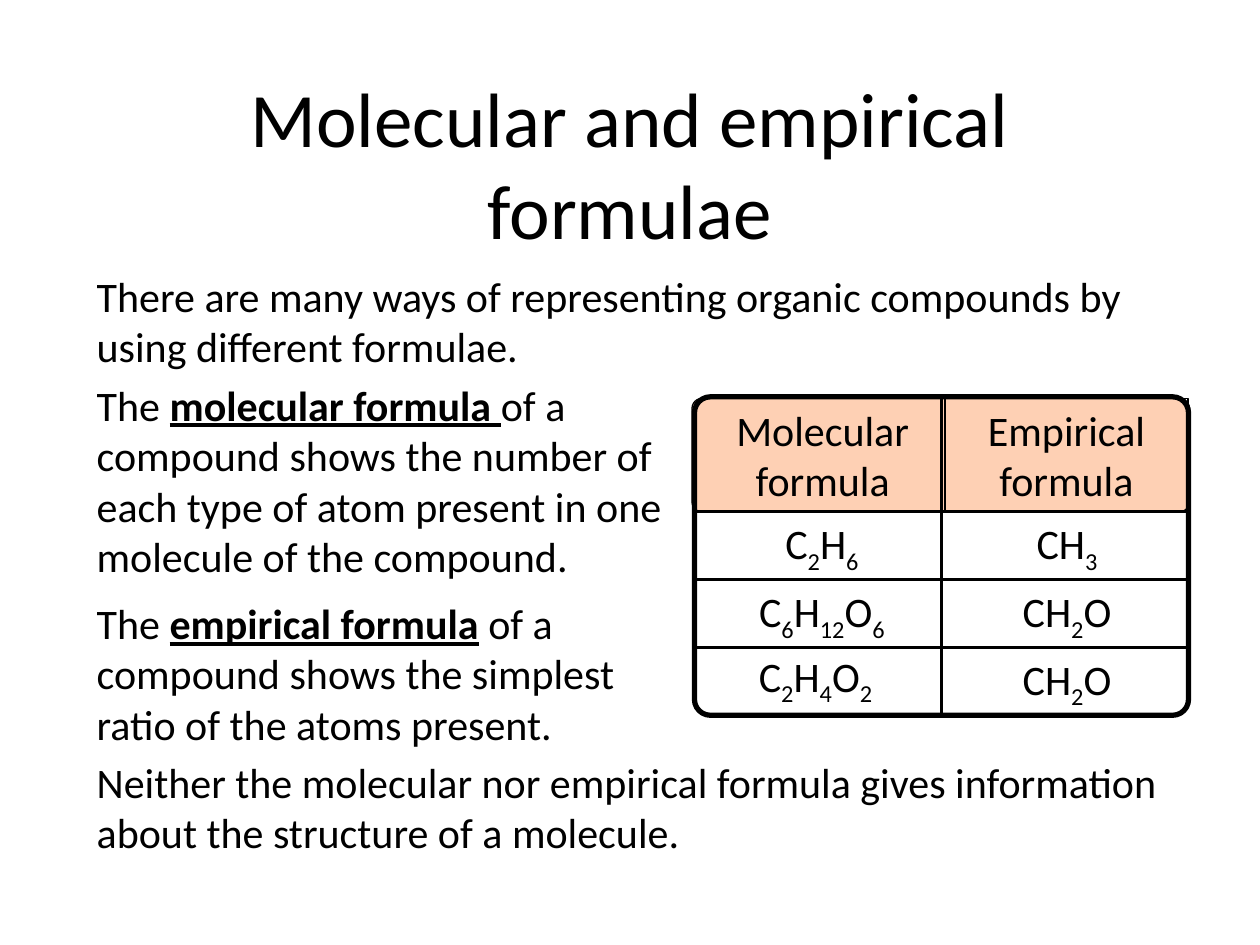
from itertools import groupby
from lxml.etree import SubElement
from pptx import Presentation
from pptx.dml.color import RGBColor
from pptx.enum.shapes import MSO_CONNECTOR, MSO_SHAPE
from pptx.enum.text import MSO_ANCHOR, PP_ALIGN
from pptx.oxml.ns import qn
from pptx.util import Cm, Pt

TITLE = "Molecular and empirical formulae"
BODY = [
    (5.33, 22.83, 2.31, [("There are many ways of representing organic compounds "
                          "by using different formulae.", False)]),
    (7.52, 12.4, 4.37, [("The ", False), ("molecular formula ", True),
                        ("of a compound shows the number of each type of atom "
                         "present in one molecule of the compound.", False)]),
    (11.92, 12.34, 3.33, [("The ", False), ("empirical formula", True),
                          (" of a compound shows the simplest ratio of the "
                           "atoms present.", False)]),
    (15.12, 23.4, 2.31, [("Neither the molecular nor empirical formula gives "
                          "information about the structure of a molecule.", False)]),
]
HEADS = ["Molecular formula", "Empirical formula"]
CELLS = [
    ("C2H6", 14.73, 10.31, 3.68), ("CH3", 20, 10.31, 3.02),
    ("C6H12O6", 14.73, 11.68, 3.68), ("CH2O", 20, 11.68, 3.02),
    ("C2H4O2", 14.6, 12.98, 3.68), ("CH2O", 20, 13.04, 3.02),
]
LEFT, TOP, WIDE, HIGH = 14, 8, 9.96, 6.42
HEAD, ROW = 2.29, 1.37
INK, PEACH = "000000", "FED0B4"


def paint(code):
    return RGBColor.from_string(code)


def add_run(para, text, size=24, strong=False, low=False):
    run = para.add_run()
    run.text = text
    font = run.font
    font.name, font.size = "Calibri", Pt(size)
    font.bold = font.underline = strong
    font.color.rgb = paint(INK)
    if low:
        run._r.get_or_add_rPr().set("baseline", "-25000")


def add_box(slide, *area):
    frame = slide.shapes.add_textbox(*map(Cm, area)).text_frame
    frame.word_wrap = True
    return frame


def add_form(slide, kind, area, width=0, fill=None):
    shape = slide.shapes.add_shape(kind, *map(Cm, area))
    shape.shadow.inherit = False
    if fill:
        shape.fill.solid()
        shape.fill.fore_color.rgb = paint(fill)
    else:
        shape.fill.background()
    if width:
        shape.line.color.rgb = paint(INK)
        shape.line.width = Pt(width)
    else:
        shape.line.fill.background()
    return shape


def add_rule(slide, *ends):
    rule = slide.shapes.add_connector(MSO_CONNECTOR.STRAIGHT, *map(Cm, ends))
    rule.line.color.rgb = paint(INK)
    rule.line.width = Pt(2)
    SubElement(rule._element.spPr, qn("a:effectLst"))
    return rule


def set_mid(frame, text, size=24):
    para = frame.paragraphs[0]
    para.alignment = PP_ALIGN.CENTER
    for low, part in groupby(text, str.isdigit):
        add_run(para, "".join(part), size, low=low)


def add_grid(slide):
    for text, left, top, wide in CELLS:
        set_mid(add_box(slide, left, top, wide, 1.35), text)
    band = add_form(slide, MSO_SHAPE.ROUNDED_RECTANGLE,
                    (13.95, 8.03, 10.03, HEAD), 0.75, PEACH)
    band.adjustments[0] = 0.09
    outer = add_form(slide, MSO_SHAPE.ROUNDED_RECTANGLE, (LEFT, TOP, WIDE, HIGH), 3)
    outer.adjustments[0] = 0.05
    mid = LEFT + WIDE / 2
    split = add_rule(slide, mid, TOP, mid, TOP + HIGH)
    split.begin_connect(outer, 0)
    split.end_connect(outer, 2)
    for step in range(3):
        high = 10.31 + step * ROW
        add_rule(slide, LEFT, high, LEFT + WIDE, high)
    right = add_form(slide, MSO_SHAPE.RECTANGLE, (19.05, 8.03, 4.9, HEAD), 0.75)
    right.text_frame.vertical_anchor = MSO_ANCHOR.TOP
    set_mid(add_box(slide, 14.12, 8.03, 4.93, HEAD), HEADS[0])
    set_mid(right.text_frame, HEADS[1])


def main():
    """Build the slide on molecular and empirical formulae."""
    deck = Presentation()
    deck.slide_width, deck.slide_height = Cm(25.4), Cm(19.05)
    slide = deck.slides.add_slide(deck.slide_layouts[6])
    title = add_form(slide, MSO_SHAPE.RECTANGLE, (1.9, 1.69, 21.6, 3.18))
    title.text_frame.vertical_anchor = MSO_ANCHOR.MIDDLE
    set_mid(title.text_frame, TITLE, 44)
    for top, wide, high, runs in BODY:
        para = add_box(slide, 1.7, top, wide, high).paragraphs[0]
        for text, strong in runs:
            add_run(para, text, strong=strong)
    add_grid(slide)
    deck.save("out.pptx")


if __name__ == "__main__":
    main()
